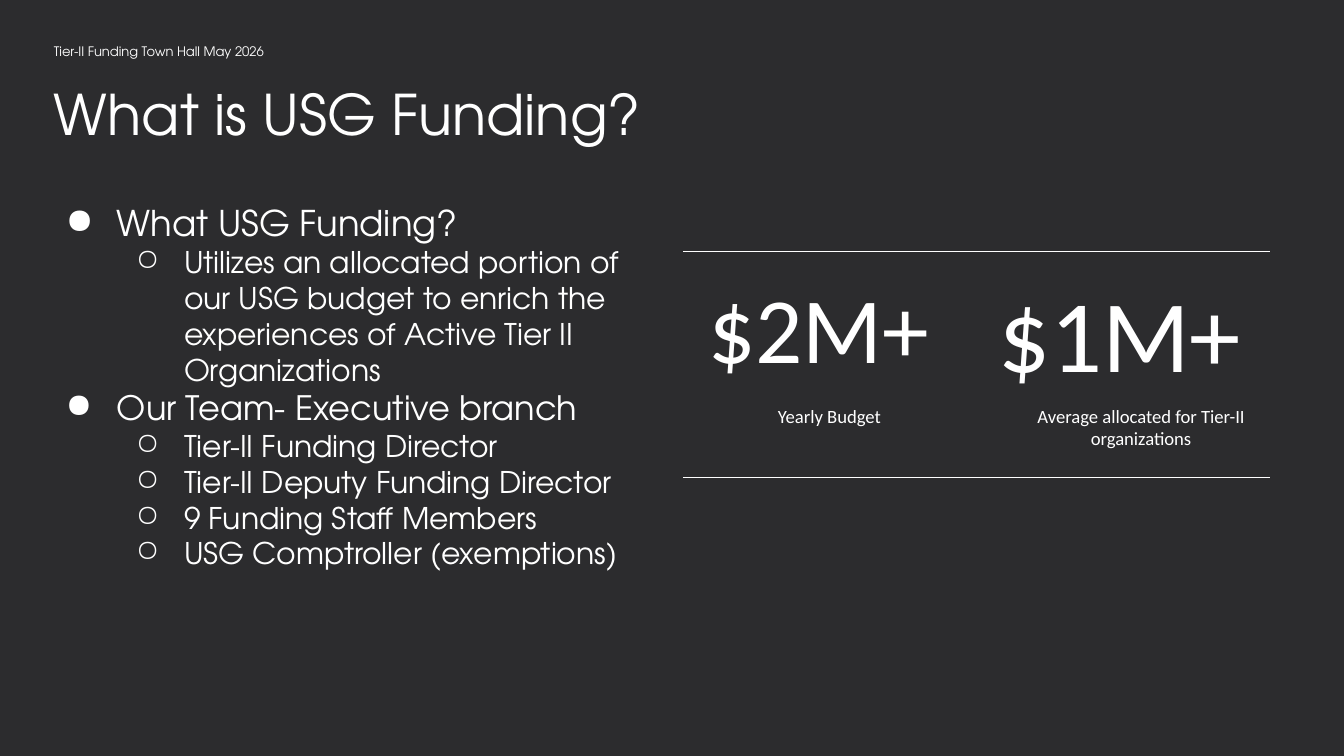
"""Build the USG funding overview slide."""
from dataclasses import dataclass

from lxml import etree
from pptx import Presentation
from pptx import util as u
from pptx.dml.color import RGBColor
from pptx.enum import shapes, text
from pptx.oxml.ns import qn


@dataclass(frozen=True)
class Theme:
    background: str = "2C2C2E"
    ink: str = "FFFFFF"
    heading_font: str = "TeX Gyre Adventor"
    figure_font: str = "Calibri"
    kicker_size: int = 7
    title_size: int = 30
    caption_size: int = 10
    detail_size: int = 16
    rule_width: float = 0.75


THEME = Theme()
KICKER = "Tier-II Funding Town Hall May 2026"
TITLE = "What is USG Funding?"
TOPICS = [
    ("What USG Funding?", 19, [
        "Utilizes an allocated portion of our USG budget to enrich the "
        "experiences of Active Tier II Organizations",
    ]),
    ("Our Team- Executive branch", 18, [
        "Tier-II Funding Director",
        "Tier-II Deputy Funding Director",
        "9 Funding Staff Members",
        "USG Comptroller (exemptions)",
    ]),
]
STATS = [
    {"figure": "$2M+", "size": 50, "left": 13.39, "width": 4.57,
     "caption": "Yearly Budget", "caption_left": 13.39},
    {"figure": "$1M+", "size": 55, "left": 18.87, "width": 5.41,
     "caption": "Average allocated for Tier-II organizations", "caption_left": 19.28},
]
BULLETS = [("●", 1.27, -0.97), ("○", 2.54, -0.91)]
MARGIN = 1.02
STAT_TOP, FIGURE_HEIGHT = 5.11, 2.54
CAPTION_WIDTH, CAPTION_HEIGHT = 4.57, 1.9
RULE_LEFT, RULE_RIGHT = 12.9, 24
RULE_TOPS = (4.75, 9.02)


def prepare(shape, box, anchor=text.MSO_ANCHOR.TOP, inset=0):
    shape.left, shape.top, shape.width, shape.height = map(u.Cm, box)
    frame = shape.text_frame
    frame.word_wrap = True
    frame.auto_size = text.MSO_AUTO_SIZE.NONE
    frame.vertical_anchor = anchor
    frame.margin_left = frame.margin_right = 0
    frame.margin_top = frame.margin_bottom = u.Cm(inset)
    return frame


def add_frame(slide, box, **options):
    return prepare(slide.shapes.add_textbox(0, 0, 0, 0), box, **options)


def write(paragraph, words, size, font, align=text.PP_ALIGN.LEFT):
    paragraph.alignment = align
    run = paragraph.add_run()
    run.text = words
    run.font.size = u.Pt(size)
    run.font.name = font
    run.font.color.rgb = RGBColor.from_string(THEME.ink)


def add_bullet(paragraph, level):
    mark, margin, indent = BULLETS[level]
    paragraph.level = level
    properties = paragraph._p.get_or_add_pPr()
    properties.set("marL", str(u.Cm(margin)))
    properties.set("indent", str(u.Cm(indent)))
    colour = etree.SubElement(properties, qn("a:buClr"))
    etree.SubElement(colour, qn("a:srgbClr"), val=THEME.ink)
    etree.SubElement(properties, qn("a:buChar"), char=mark)


def add_headings(slide):
    kicker = add_frame(slide, (MARGIN, 0.61, 11.56, 0.66),
                       anchor=text.MSO_ANCHOR.MIDDLE)
    title = prepare(slide.shapes.title, (MARGIN, 1.5, 23.24, 1.27),
                    anchor=text.MSO_ANCHOR.BOTTOM)
    for frame, words, size in ((kicker, KICKER, THEME.kicker_size),
                               (title, TITLE, THEME.title_size)):
        paragraph = frame.paragraphs[0]
        paragraph.line_spacing = 1.15
        write(paragraph, words, size, THEME.heading_font)


def add_topics(slide):
    frame = add_frame(slide, (0.94, 3.43, 11.1, 8.33), inset=0.38)
    lines = []
    for topic, size, details in TOPICS:
        lines.append((topic, size, 0))
        lines += [(detail, THEME.detail_size, 1) for detail in details]
    for index, (words, size, level) in enumerate(lines):
        paragraph = frame.add_paragraph() if index else frame.paragraphs[0]
        add_bullet(paragraph, level)
        write(paragraph, words, size, THEME.heading_font)


def add_stats(slide):
    for top in RULE_TOPS:
        rule = slide.shapes.add_connector(
            shapes.MSO_CONNECTOR.STRAIGHT,
            u.Cm(RULE_RIGHT), u.Cm(top), u.Cm(RULE_LEFT), u.Cm(top))
        rule.line.color.rgb = RGBColor.from_string(THEME.ink)
        rule.line.width = u.Pt(THEME.rule_width)
        etree.SubElement(rule._element.spPr, qn("a:effectLst"))
    for stat in STATS:
        figure = add_frame(slide, (stat["left"], STAT_TOP, stat["width"], FIGURE_HEIGHT))
        write(figure.paragraphs[0], stat["figure"], stat["size"], THEME.figure_font)
        caption = add_frame(slide, (stat["caption_left"], STAT_TOP + FIGURE_HEIGHT,
                                    CAPTION_WIDTH, CAPTION_HEIGHT))
        paragraph = caption.paragraphs[0]
        paragraph.space_after = u.Pt(8)
        write(paragraph, stat["caption"], THEME.caption_size, THEME.figure_font,
              text.PP_ALIGN.CENTER)


def main():
    deck = Presentation()
    deck.slide_width, deck.slide_height = u.Cm(25.4), u.Cm(14.29)
    slide = deck.slides.add_slide(deck.slide_layouts.get_by_name("Title Only"))
    slide.background.fill.solid()
    slide.background.fill.fore_color.rgb = RGBColor.from_string(THEME.background)
    add_headings(slide)
    add_stats(slide)
    add_topics(slide)
    deck.save("out.pptx")


if __name__ == "__main__":
    main()
